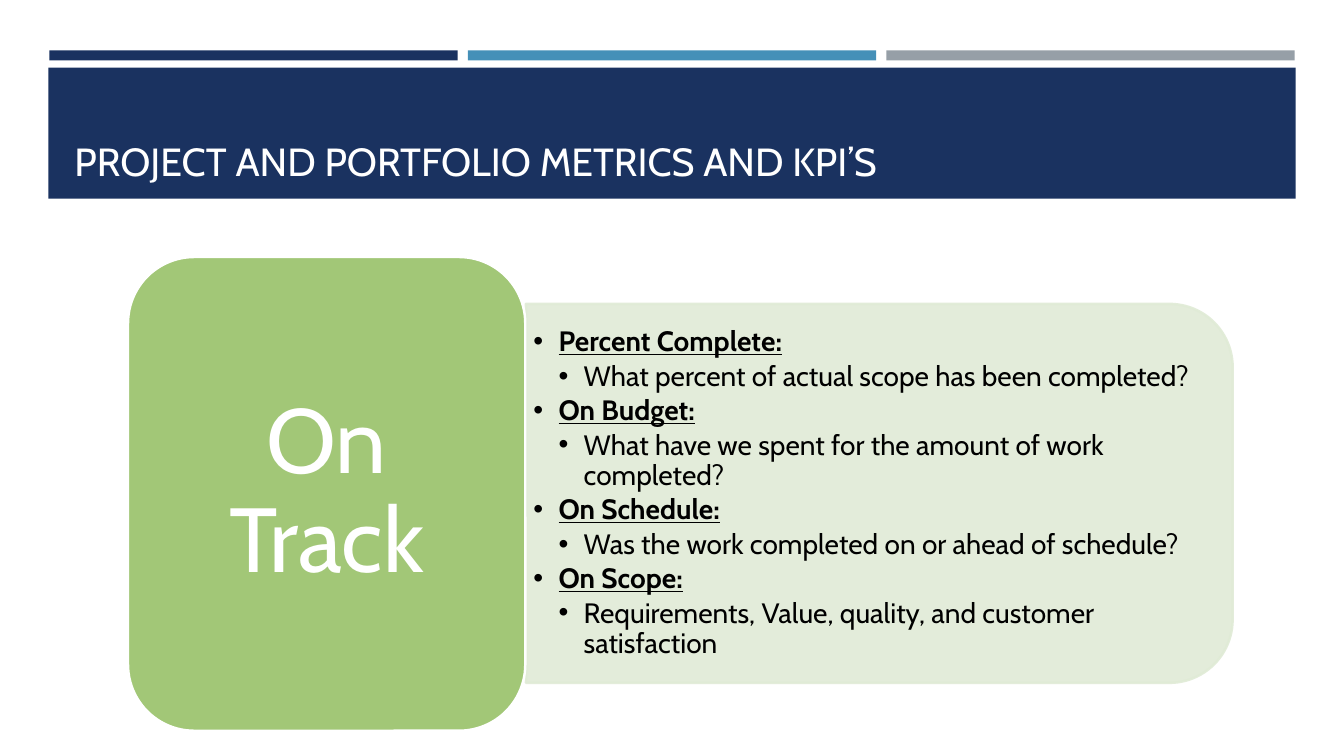
from lxml.etree import SubElement
from pptx import Presentation
from pptx.dml.color import RGBColor
from pptx.enum.shapes import MSO_SHAPE as SHAPE
from pptx.enum.text import MSO_ANCHOR as ANCHOR, PP_ALIGN as ALIGN
from pptx.oxml.ns import qn
from pptx.util import Inches, Pt

FONT = "Cabin"
COLORS = {
    "navy": "1A3260",
    "blue": "4590B8",
    "gray": "969FA7",
    "green": "A2C777",
    "pale": "E0EBD6",
    "white": "FFFFFF",
    "black": "000000",
}
METRICS = [
    ("Percent Complete:", "What percent of actual scope has been completed?"),
    ("On Budget:", "What have we spent for the amount of work completed?"),
    ("On Schedule:", "Was the work completed on or ahead of schedule?"),
    ("On Scope:", "Requirements, Value, quality, and customer satisfaction"),
]


def rgb(name):
    return RGBColor.from_string(COLORS[name])


def set_opacity(fill_parent, percent):
    for color in fill_parent.iter(qn("a:srgbClr")):
        SubElement(color, qn("a:alpha"), val=str(percent * 1000))


def add_block(slide, kind, box, fill, line=None, rotation=0, opacity=None):
    block = slide.shapes.add_shape(kind, *map(Inches, box))
    block.shadow.inherit = False
    block.rotation = rotation
    block.fill.solid()
    block.fill.fore_color.rgb = rgb(fill)
    if line:
        block.line.color.rgb = rgb(line)
        block.line.width = Pt(1.75)
    else:
        block.line.fill.background()
    if opacity:
        set_opacity(block.element.spPr, opacity)


def add_frame(slide, box, anchor, inset_x=0.1, inset_y=0.05):
    frame = slide.shapes.add_textbox(*map(Inches, box)).text_frame
    frame.word_wrap = True
    frame.vertical_anchor = anchor
    frame.margin_left = frame.margin_right = Inches(inset_x)
    frame.margin_top = frame.margin_bottom = Inches(inset_y)
    return frame


def write(paragraph, text, size, color, bold=False, underline=False,
          align=ALIGN.LEFT, spacing=None, after=0, bullet_level=None):
    paragraph.alignment = align
    paragraph.line_spacing = spacing
    paragraph.space_after = Pt(after)
    if bullet_level is not None:
        paragraph.level = bullet_level
        props = paragraph._p.get_or_add_pPr()
        props.set("marL", str(Inches(0.25 * bullet_level)))
        props.set("indent", str(Inches(-0.25)))
        SubElement(props, qn("a:buFont"), typeface="Arial")
        SubElement(props, qn("a:buChar"), char="•")
    run = paragraph.add_run()
    run.text = text
    run.font.name = FONT
    run.font.size = Pt(size)
    run.font.bold = bold
    run.font.underline = underline
    run.font.color.rgb = rgb(color)


def add_metrics(slide):
    frame = add_frame(slide, (5.21, 3.2, 6.83, 3.39), ANCHOR.MIDDLE, 0.08, 0.04)
    lines = [(level, text) for metric in METRICS
             for level, text in enumerate(metric, start=1)]
    for index, (level, text) in enumerate(lines):
        paragraph = frame.add_paragraph() if index else frame.paragraphs[0]
        heading = level == 1
        write(paragraph, text, 20, "black", bold=heading, underline=heading,
              spacing=0.9, after=3, bullet_level=level)


def main():
    deck = Presentation()
    deck.slide_width, deck.slide_height = Inches(13.33), Inches(7.5)
    slide = deck.slides.add_slide(deck.slide_layouts[6])

    # Header bars and title band
    for column, color in enumerate(("navy", "blue", "gray")):
        add_block(slide, SHAPE.RECTANGLE, (0.49 + 4.15 * column, 0.5, 4.05, 0.1), color)
    add_block(slide, SHAPE.RECTANGLE, (0.48, 0.67, 12.37, 1.3), "navy")
    title = add_frame(slide, (0.64, 0.77, 12.06, 1.11), ANCHOR.BOTTOM)
    write(title.paragraphs[0], "PROJECT AND PORTFOLIO METRICS AND KPI’S", 28, "white")

    # Metrics panel, rounded on its right side
    add_block(slide, SHAPE.ROUND_2_SAME_RECTANGLE, (6.84, 1.39, 3.76, 7.01),
              "pale", line="pale", rotation=90, opacity=90)
    add_metrics(slide)

    # Status tile
    add_block(slide, SHAPE.ROUNDED_RECTANGLE, (1.27, 2.55, 3.94, 4.7), "green", line="white")
    status = add_frame(slide, (1.46, 2.74, 3.56, 4.31), ANCHOR.MIDDLE, 0.27, 0.14)
    write(status.paragraphs[0], "On Track", 65, "white", align=ALIGN.CENTER,
          spacing=0.9, after=23)

    deck.save("out.pptx")


if __name__ == "__main__":
    main()
